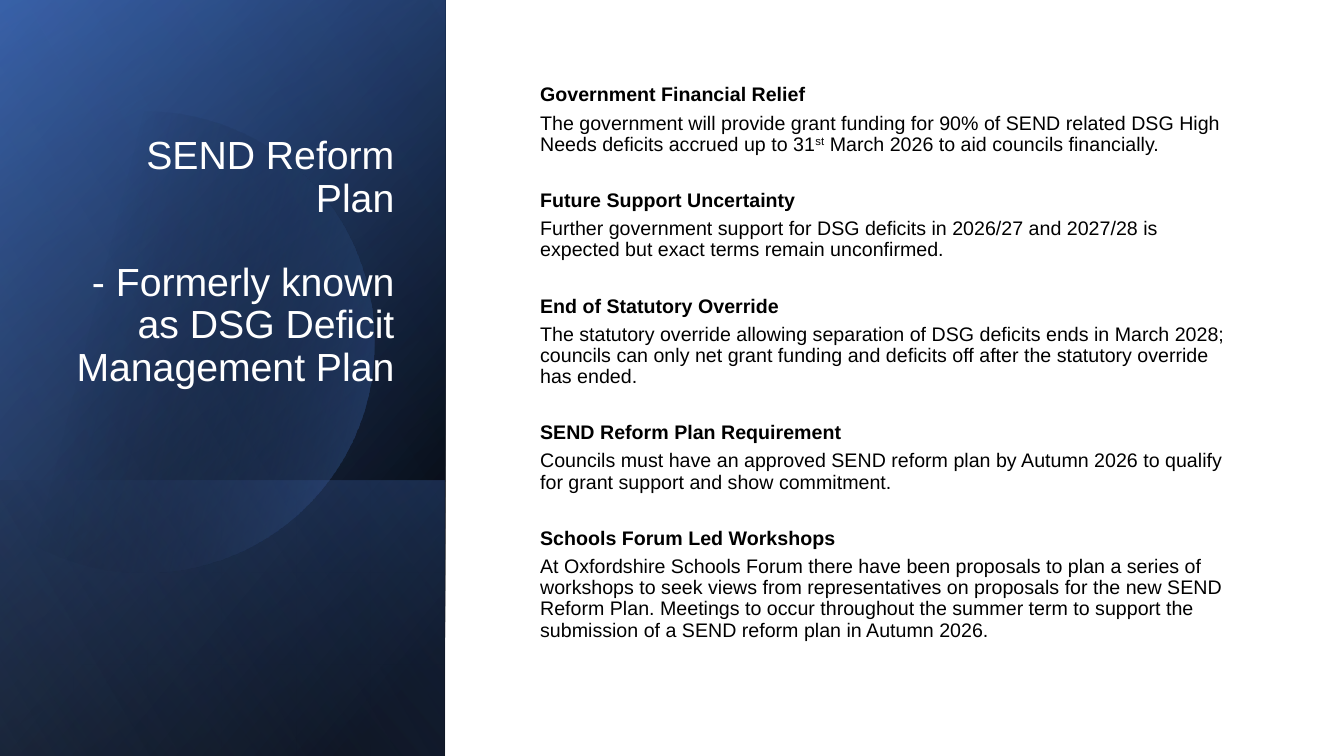
from dataclasses import dataclass

from lxml import etree
from pptx import Presentation
from pptx.dml.color import RGBColor
from pptx.enum.shapes import MSO_SHAPE
from pptx.enum.text import MSO_ANCHOR, PP_ALIGN
from pptx.oxml.ns import qn
from pptx.util import Pt

PX = 9525
SLIDE_WIDTH, SLIDE_HEIGHT = 1280, 720
PANEL_WIDTH = 424
CURVE_STEPS = 24
RECTANGLE = MSO_SHAPE.RECTANGLE
BOTTOM, MIDDLE = MSO_ANCHOR.BOTTOM, MSO_ANCHOR.MIDDLE
LEFT, RIGHT = PP_ALIGN.LEFT, PP_ALIGN.RIGHT


@dataclass(frozen=True)
class Theme:
    font: str = "Arial"
    black: str = "000000"
    white: str = "FFFFFF"
    navy: str = "2F5597"
    blue: str = "4472C4"
    pale: str = "8FAADC"
    title_size: int = 28
    body_size: int = 14
    line_spacing: float = 0.9


THEME = Theme()


@dataclass(frozen=True)
class Stop:
    position: int
    color: str
    opacity: int = 100


@dataclass(frozen=True)
class Gradient:
    start: Stop
    end: Stop
    angle: int


@dataclass(frozen=True)
class Layer:
    top: int
    gradient: Gradient


@dataclass(frozen=True)
class Span:
    text: str
    bold: bool = False
    raised: bool = False


@dataclass(frozen=True)
class Section:
    heading: str
    spans: tuple[Span, ...]


@dataclass(frozen=True)
class TextStyle:
    size: int
    color: str
    align: PP_ALIGN


BASE_LAYERS = (
    Layer(0, Gradient(Stop(8, THEME.black), Stop(100, THEME.navy), 50)),
    Layer(0, Gradient(Stop(0, THEME.black, 0), Stop(99, THEME.blue, 46), 30)),
    Layer(457, Gradient(Stop(2, THEME.blue, 29), Stop(100, THEME.black, 30), 130)),
)
SHEEN = Layer(0, Gradient(Stop(0, THEME.black, 0), Stop(99, THEME.pale, 11), 120))
DISC_GRADIENT = Gradient(Stop(29, THEME.black, 0), Stop(100, THEME.blue, 43), 14)
DISC_START = (143, 106)
DISC_CURVES = (
    ((236, 108), (322, 170), (348, 264)),
    ((382, 382), (315, 502), (199, 536)),
    ((126, 557), (51, 539), (0, 496)),
    ((0, 382), (0, 269), (0, 155)),
    ((40, 122), (91, 106), DISC_START),
)

TITLE_STYLE = TextStyle(THEME.title_size, THEME.white, RIGHT)
BODY_STYLE = TextStyle(THEME.body_size, THEME.black, LEFT)
TITLE_LINES = ("SEND Reform Plan", "- Formerly known as DSG Deficit Management Plan")
SECTIONS = (
    Section("Government Financial Relief", (
        Span("The government will provide grant funding for 90% of SEND related DSG High "
             "Needs deficits accrued up to 31"),
        Span("st", raised=True),
        Span(" March 2026 to aid councils financially."),
    )),
    Section("Future Support Uncertainty", (
        Span("Further government support for DSG deficits in 2026/27 and 2027/28 is "
             "expected but exact terms remain unconfirmed."),
    )),
    Section("End of Statutory Override", (
        Span("The statutory override allowing separation of DSG deficits ends in March 2028; "
             "councils can only net grant funding and deficits off after the statutory "
             "override has ended."),
    )),
    Section("SEND Reform Plan Requirement", (
        Span("Councils must have an approved SEND reform plan by Autumn 2026 to qualify "
             "for grant support and show commitment."),
    )),
    Section("Schools Forum Led Workshops", (
        Span("At Oxfordshire Schools Forum there have been proposals to plan a series of "
             "workshops to seek views from representatives on proposals for the new SEND "
             "Reform Plan. Meetings to occur throughout the summer term to support the "
             "submission of a SEND reform plan in Autumn 2026."),
    )),
)


def paint(shape, gradient: Gradient) -> None:
    shape.shadow.inherit = False
    shape.line.fill.background()
    shape.fill.gradient()
    shape.fill.gradient_angle = 360 - gradient.angle
    stops = (gradient.start, gradient.end)
    for target, stop in zip(shape.fill.gradient_stops, stops):
        target.position = stop.position / 100
        target.color.rgb = RGBColor.from_string(stop.color)
    for color, stop in zip(shape._element.spPr.iter(qn("a:srgbClr")), stops):
        if stop.opacity < 100:
            etree.SubElement(color, qn("a:alpha")).set("val", str(stop.opacity * 1000))


def add_layer(page, layer: Layer) -> None:
    height = SLIDE_HEIGHT - layer.top
    shift = (PANEL_WIDTH - height) // 2
    shape = page.shapes.add_shape(RECTANGLE, shift * PX, (layer.top - shift) * PX,
                                  height * PX, PANEL_WIDTH * PX)
    shape.rotation = 90
    shape._element.spPr.find(qn("a:xfrm")).set("flipH", "1")
    paint(shape, layer.gradient)


def curve_point(t: float, *controls: tuple[int, int]) -> tuple[int, int]:
    weights = ((1 - t) ** 3, 3 * t * (1 - t) ** 2, 3 * t * t * (1 - t), t ** 3)
    x, y = (sum(w * c for w, c in zip(weights, axis)) for axis in zip(*controls))
    return round(x * PX), round(y * PX)


def add_disc(page) -> None:
    points, start = [], DISC_START
    for first, second, end in DISC_CURVES:
        points += [curve_point(step / CURVE_STEPS, start, first, second, end)
                   for step in range(1, CURVE_STEPS + 1)]
        start = end
    builder = page.shapes.build_freeform(DISC_START[0] * PX, DISC_START[1] * PX)
    builder.add_line_segments(points, close=True)
    paint(builder.convert_to_shape(), DISC_GRADIENT)


def add_text_frame(page, left: int, top: int, width: int, height: int,
                   anchor: MSO_ANCHOR, bottom_inset: int):
    box = page.shapes.add_textbox(left * PX, top * PX, width * PX, height * PX)
    frame = box.text_frame
    frame.word_wrap = True
    frame.vertical_anchor = anchor
    frame.margin_bottom = bottom_inset * PX
    return frame


def add_para(frame, spans: tuple[Span, ...], style: TextStyle, before: int) -> None:
    first = not frame.paragraphs[0].runs
    para = frame.paragraphs[0] if first else frame.add_paragraph()
    para.alignment = style.align
    para.line_spacing = THEME.line_spacing
    para.space_before = Pt(0 if first else before)
    for span in spans:
        run = para.add_run()
        run.text = span.text
        run.font.name = THEME.font
        run.font.size = Pt(style.size)
        run.font.bold = span.bold
        run.font.color.rgb = RGBColor.from_string(style.color)
        if span.raised:
            run.font._element.set("baseline", "30000")


def main() -> None:
    deck = Presentation()
    deck.slide_width, deck.slide_height = SLIDE_WIDTH * PX, SLIDE_HEIGHT * PX
    page = deck.slides.add_slide(deck.slide_layouts[6])
    for layer in BASE_LAYERS:
        add_layer(page, layer)
    add_disc(page)
    add_layer(page, SHEEN)
    title = add_text_frame(page, 49, 61, 336, 355, BOTTOM, 45)
    for line in TITLE_LINES:
        add_para(title, (Span(line),), TITLE_STYLE, 30)
    body = add_text_frame(page, 505, 68, 688, 583, MIDDLE, 32)
    for section in SECTIONS:
        add_para(body, (Span(section.heading, bold=True),), BODY_STYLE, 25)
        add_para(body, section.spans, BODY_STYLE, 5)
    deck.save("out.pptx")


if __name__ == "__main__":
    main()
